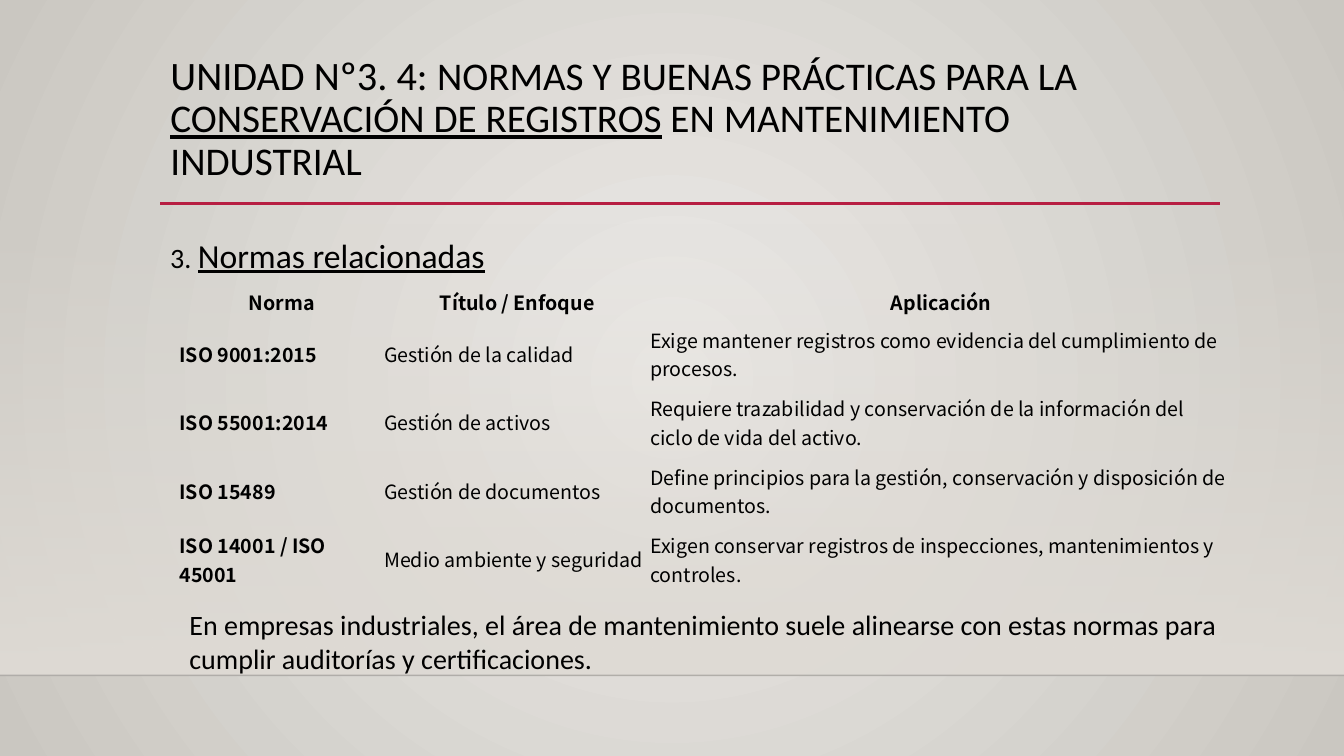
from dataclasses import dataclass

from lxml import etree
from pptx import Presentation
from pptx.dml.color import RGBColor
from pptx.enum.shapes import MSO_CONNECTOR, MSO_SHAPE
from pptx.enum.text import MSO_ANCHOR, MSO_AUTO_SIZE, PP_ALIGN
from pptx.oxml import parse_xml
from pptx.oxml.ns import nsdecls, qn
from pptx.util import Inches, Pt


@dataclass(frozen=True)
class Theme:
    font: str = "Calibri"
    table_font: str = "Noto Sans CJK SC"
    ink: str = "000000"
    accent: str = "B71E42"
    glow: str = "ECEAE7"
    edge: str = "CAC7C1"
    floor: str = "DFDBD5"
    floor_line: str = "000001"
    unit_size: float = 28.8
    title_size: float = 28
    heading_size: float = 24
    body_size: float = 20
    table_size: float = 14


THEME = Theme()
NO_STYLE_NO_GRID = "{2D5ABB26-0587-4C30-8999-92F81FD0307C}"
CIRCLE = ('<a:path path="circle"><a:fillToRect l="50000" t="50000" '
          'r="50000" b="50000"/></a:path>')
DOWNWARD = '<a:lin ang="5400000" scaled="0"/>'

ROW_HEIGHTS = [0.34] + [0.68] * 4
COLUMN_WIDTHS = [2.03, 2.64, 5.77]
HEADERS = ["Norma", "Título / Enfoque", "Aplicación"]
STANDARDS = [
    ["ISO 9001:2015", "Gestión de la calidad",
     "Exige mantener registros como evidencia del cumplimiento de procesos."],
    ["ISO 55001:2014", "Gestión de activos",
     "Requiere trazabilidad y conservación de la información del ciclo de vida del activo."],
    ["ISO 15489", "Gestión de documentos",
     "Define principios para la gestión, conservación y disposición de documentos."],
    ["ISO 14001 / ISO 45001", "Medio ambiente y seguridad",
     "Exigen conservar registros de inspecciones, mantenimientos y controles."],
]


def set_gradient(fill, parent, stops, direction):
    """Give parent a gradient of (position, colour, opacity) stops."""
    fill.solid()
    marks = "".join(
        f'<a:gs pos="{pos * 1000}"><a:srgbClr val="{color}">'
        f'<a:alpha val="{opacity * 1000}"/></a:srgbClr></a:gs>'
        for pos, color, opacity in stops)
    gradient = parse_xml(f'<a:gradFill {nsdecls("a")} rotWithShape="1">'
                         f'<a:gsLst>{marks}</a:gsLst>{direction}</a:gradFill>')
    parent.replace(parent.find(qn("a:solidFill")), gradient)


def add_run(p, text, size, font=THEME.font, bold=False, underline=False):
    r = p.add_run()
    r.text = text
    r.font.name = font
    r.font.size = Pt(size)
    r.font.bold = bold
    r.font.underline = underline
    r.font.color.rgb = RGBColor.from_string(THEME.ink)


def prepare_text(sp):
    """Set wrapping and top anchoring, and return the first paragraph."""
    tf = sp.text_frame
    tf.word_wrap = True
    tf.auto_size = MSO_AUTO_SIZE.NONE
    tf.vertical_anchor = MSO_ANCHOR.TOP
    p = tf.paragraphs[0]
    p.alignment = PP_ALIGN.LEFT
    return p


def add_text(slide, left, top, width, height):
    sp = slide.shapes.add_textbox(Inches(left), Inches(top),
                                  Inches(width), Inches(height))
    return prepare_text(sp)


def add_rule(slide, left, right, y, color, weight, opacity=100):
    line = slide.shapes.add_connector(MSO_CONNECTOR.STRAIGHT, Inches(left),
                                      Inches(y), Inches(right), Inches(y))
    line.line.width = Pt(weight)
    line.line.color.rgb = RGBColor.from_string(color)
    sp_pr = line._element.spPr
    shade = sp_pr.find(".//" + qn("a:srgbClr"))
    etree.SubElement(shade, qn("a:alpha")).set("val", str(opacity * 1000))
    etree.SubElement(sp_pr, qn("a:effectLst"))


def add_backdrop(slide):
    background = slide.background.fill
    set_gradient(background, slide._element.xpath(".//p:bgPr")[0],
                 [(0, THEME.glow, 100), (100, THEME.edge, 100)], CIRCLE)
    sp = slide.shapes.add_shape(MSO_SHAPE.RECTANGLE, Inches(0), Inches(2.21),
                                Inches(13.33), Inches(4.49))
    sp.shadow.inherit = False
    sp.line.fill.background()
    set_gradient(sp.fill, sp._element.spPr,
                 [(0, THEME.floor, 0), (100, THEME.floor, 100)], DOWNWARD)
    add_rule(slide, 0, 13.33, 6.7, THEME.floor_line, 1, opacity=20)
    add_rule(slide, 1.59, 12.1, 2.02, THEME.accent, 2.5)


def add_title(slide):
    title = slide.shapes.title
    title.left, title.top = Inches(1.59), Inches(0.5)
    title.width, title.height = Inches(10.5), Inches(1.53)
    p = prepare_text(title)
    p.line_spacing = 0.9
    add_run(p, "UNIDAD Nº3. 4: ", THEME.unit_size)
    add_run(p, "NORMAS Y BUENAS PRÁCTICAS PARA LA ", THEME.title_size)
    add_run(p, "CONSERVACIÓN DE REGISTROS", THEME.title_size, underline=True)
    add_run(p, " EN MANTENIMIENTO INDUSTRIAL", THEME.title_size)


def add_standards_table(slide):
    rows = [HEADERS] + STANDARDS
    frame = slide.shapes.add_table(
        len(rows), len(HEADERS), Inches(1.78), Inches(2.83),
        Inches(sum(COLUMN_WIDTHS)), Inches(sum(ROW_HEIGHTS)))
    table = frame.table
    table.first_row = table.horz_banding = False
    table._tbl.tblPr.find(qn("a:tableStyleId")).text = NO_STYLE_NO_GRID
    for column, width in zip(table.columns, COLUMN_WIDTHS):
        column.width = Inches(width)
    for i, (texts, height) in enumerate(zip(rows, ROW_HEIGHTS)):
        table.rows[i].height = Inches(height)
        for j, text in enumerate(texts):
            cell = table.cell(i, j)
            cell.fill.background()
            cell.vertical_anchor = MSO_ANCHOR.MIDDLE
            cell.margin_left = cell.margin_right = Inches(0)
            cell.margin_top = cell.margin_bottom = Inches(0)
            p = cell.text_frame.paragraphs[0]
            p.alignment = PP_ALIGN.CENTER if i == 0 else PP_ALIGN.LEFT
            add_run(p, text, THEME.table_size, THEME.table_font,
                    bold=i == 0 or j == 0)


def main():
    prs = Presentation()
    prs.slide_width, prs.slide_height = Inches(13.33), Inches(7.5)
    slide = prs.slides.add_slide(prs.slide_layouts[5])
    add_backdrop(slide)
    add_title(slide)

    heading = add_text(slide, 1.59, 2.2, 10.5, 3.77)
    heading.line_spacing = 1.2
    add_run(heading, "3. ", THEME.body_size)
    add_run(heading, "Normas relacionadas", THEME.heading_size, underline=True)

    add_standards_table(slide)
    closing = add_text(slide, 1.78, 5.98, 10.97, 0.93)
    add_run(closing, "En empresas industriales, el área de mantenimiento suele "
            "alinearse con estas normas para cumplir auditorías y "
            "certificaciones.", THEME.body_size)
    prs.save("out.pptx")


if __name__ == "__main__":
    main()
